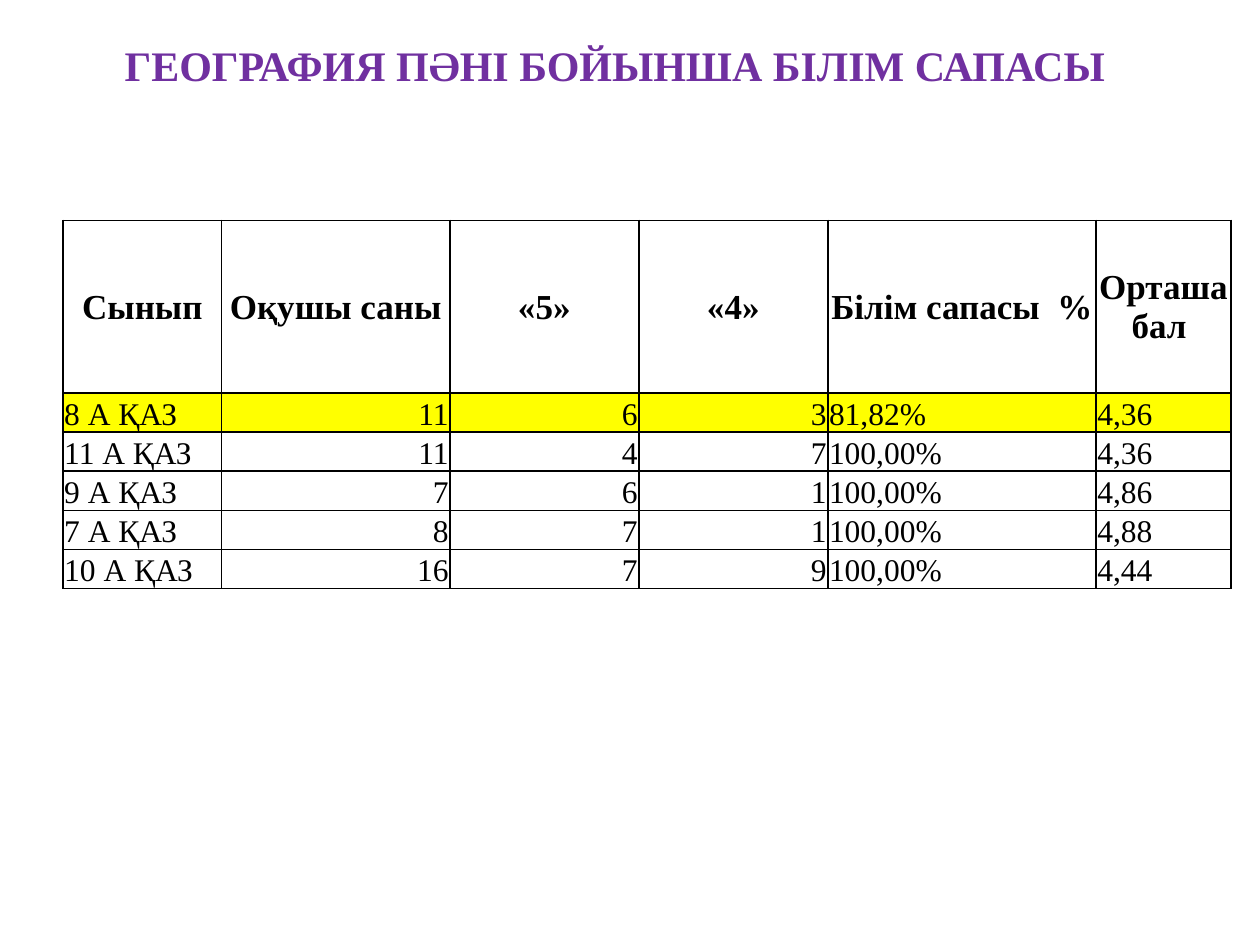
"""Builds a slide with a title and a table of geography results by class."""
from lxml.etree import SubElement as Sub
from pptx import Presentation
from pptx.dml.color import RGBColor
from pptx.enum.text import MSO_ANCHOR as Anchor, MSO_AUTO_SIZE as Fit, PP_ALIGN as Align
from pptx.oxml.ns import qn
from pptx.util import Inches, Pt

PURPLE = RGBColor(0x70, 0x30, 0xA0)
BLACK = RGBColor(0, 0, 0)
WHITE = RGBColor(255, 255, 255)
YELLOW = RGBColor(255, 255, 0)
WIDE, HIGH = Inches(10), Inches(7.5)
COLS = [1.26, 1.81, 1.5, 1.5, 2.13, 1.07]
ROWS = [1.37] + [0.2] * 5
SIDES = [Align.LEFT] + [Align.RIGHT] * 3 + [Align.LEFT] * 2
HEAD = ["Сынып", "Оқушы саны", "«5»", "«4»", "Білім сапасы  %", "Орташа бал "]
BODY = [
    ["8 А ҚАЗ", "11", "6", "3", "81,82%", "4,36"],
    ["11 А ҚАЗ", "11", "4", "7", "100,00%", "4,36"],
    ["9 А ҚАЗ", "7", "6", "1", "100,00%", "4,86"],
    ["7 А ҚАЗ", "8", "7", "1", "100,00%", "4,88"],
    ["10 А ҚАЗ", "16", "7", "9", "100,00%", "4,44"],
]


def put(item, values):
    for key, value in values.items():
        setattr(item, key, value)


def write(frame, text, align, size, color, bold):
    para = frame.paragraphs[0]
    para.alignment = align
    run = para.add_run()
    run.text = text
    put(run.font, {"name": "Times New Roman", "size": Pt(size), "bold": bold})
    run.font.color.rgb = color


def border(cell):
    props = cell._tc.get_or_add_tcPr()
    for side in ("lnL", "lnR", "lnT", "lnB"):
        line = Sub(props, qn(f"a:{side}"), w=str(Pt(1)))
        fill = Sub(line, qn("a:solidFill"))
        Sub(fill, qn("a:srgbClr"), val=str(BLACK))


def style(cell, color, anchor):
    edge = Inches(0.01)
    put(cell, {"margin_left": edge, "margin_right": edge, "margin_top": edge,
               "margin_bottom": 0, "vertical_anchor": anchor})
    border(cell)
    cell.fill.solid()
    cell.fill.fore_color.rgb = color


def title(slide, text):
    box = slide.shapes.add_textbox(
        int(WIDE * 0.063), int(HIGH * 0.035), int(WIDE * 0.85), int(HIGH * 0.067))
    put(box.text_frame, {"word_wrap": True, "auto_size": Fit.SHAPE_TO_FIT_TEXT})
    write(box.text_frame, text, Align.CENTER, 24, PURPLE, True)


def grid(slide):
    shape = slide.shapes.add_table(
        len(ROWS), len(COLS), int(WIDE * 0.05), int(HIGH * 0.2333),
        Inches(sum(COLS)), Inches(sum(ROWS)))
    table = shape.table
    for col, size in zip(table.columns, COLS):
        col.width = Inches(size)
    for row, size in zip(table.rows, ROWS):
        row.height = Inches(size)
    for r, line in enumerate([HEAD] + BODY):
        top = r == 0
        for c, text in enumerate(line):
            cell = table.cell(r, c)
            style(cell, YELLOW if r == 1 else WHITE,
                  Anchor.MIDDLE if top else Anchor.BOTTOM)
            write(cell.text_frame, text, Align.CENTER if top else SIDES[c],
                  20 if top else 18, BLACK, top)


def main():
    deck = Presentation()
    put(deck, {"slide_width": WIDE, "slide_height": HIGH})
    slide = deck.slides.add_slide(deck.slide_layouts[6])
    title(slide, "ГЕОГРАФИЯ ПӘНІ БОЙЫНША БІЛІМ САПАСЫ")
    grid(slide)
    deck.save("out.pptx")


if __name__ == "__main__":
    main()
